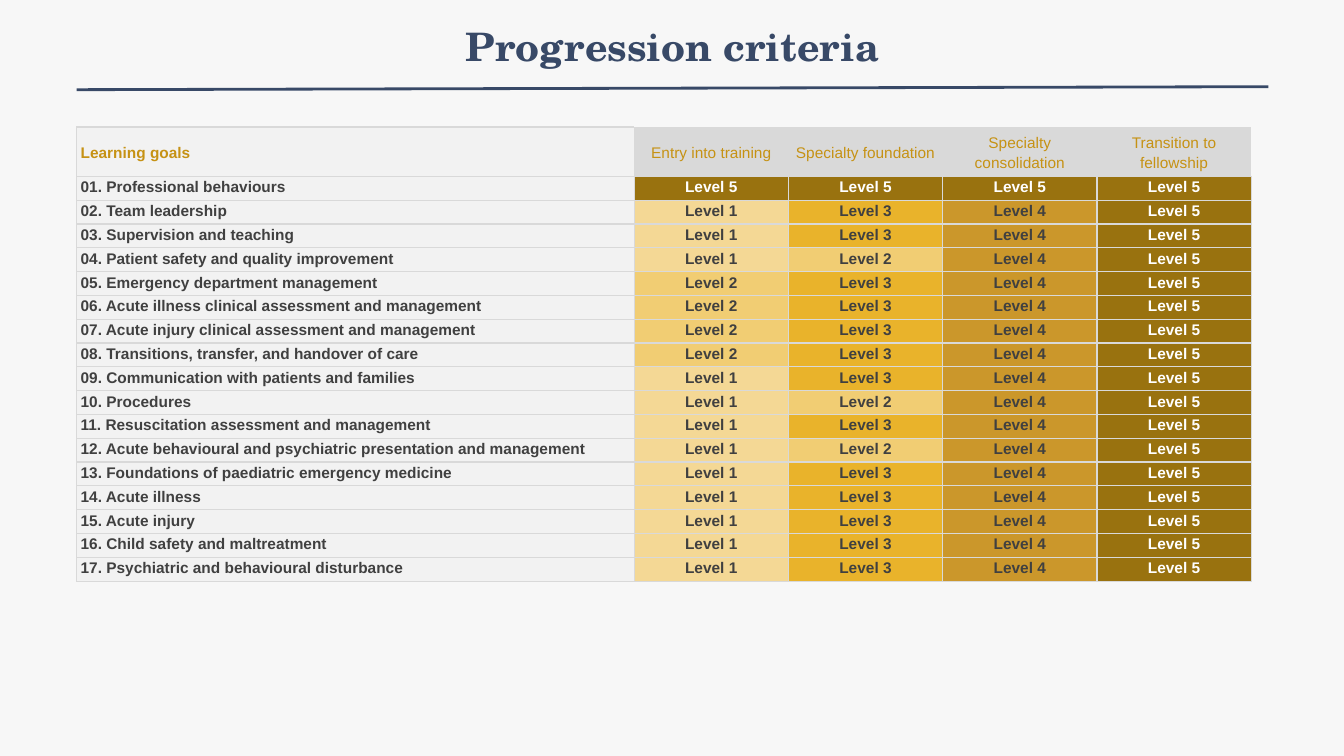
from lxml import etree
from pptx import Presentation
from pptx.dml.color import RGBColor
from pptx.enum.text import MSO_ANCHOR, PP_ALIGN
from pptx.oxml.ns import qn
from pptx.util import Inches, Pt

CENTER, LEFT = PP_ALIGN.CENTER, PP_ALIGN.LEFT
TOP, MIDDLE = MSO_ANCHOR.TOP, MSO_ANCHOR.MIDDLE

PAPER = RGBColor(0xF7, 0xF7, 0xF7)
NAVY = RGBColor(0x38, 0x49, 0x67)
GOLD = RGBColor(0xC6, 0x92, 0x14)
PALE = RGBColor(0xF2, 0xF2, 0xF2)
GREY = RGBColor(0xD9, 0xD9, 0xD9)
DARK = RGBColor(0x40, 0x40, 0x40)
WHITE = RGBColor(0xFF, 0xFF, 0xFF)
LEVEL_FILLS = {
    1: RGBColor(0xF4, 0xD8, 0x95),
    2: RGBColor(0xF1, 0xCD, 0x73),
    3: RGBColor(0xE9, 0xB3, 0x2B),
    4: RGBColor(0xCB, 0x97, 0x2B),
    5: RGBColor(0x99, 0x72, 0x0F),
}

STAGES = ["Entry into training", "Specialty foundation",
          "Specialty consolidation", "Transition to fellowship"]
GOALS = [
    ("Professional behaviours", (5, 5, 5, 5)),
    ("Team leadership", (1, 3, 4, 5)),
    ("Supervision and teaching", (1, 3, 4, 5)),
    ("Patient safety and quality improvement", (1, 2, 4, 5)),
    ("Emergency department management", (2, 3, 4, 5)),
    ("Acute illness clinical assessment and management", (2, 3, 4, 5)),
    ("Acute injury clinical assessment and management", (2, 3, 4, 5)),
    ("Transitions, transfer, and handover of care", (2, 3, 4, 5)),
    ("Communication with patients and families", (1, 3, 4, 5)),
    ("Procedures", (1, 2, 4, 5)),
    ("Resuscitation assessment and management", (1, 3, 4, 5)),
    ("Acute behavioural and psychiatric presentation and management", (1, 2, 4, 5)),
    ("Foundations of paediatric emergency medicine", (1, 3, 4, 5)),
    ("Acute illness", (1, 3, 4, 5)),
    ("Acute injury", (1, 3, 4, 5)),
    ("Child safety and maltreatment", (1, 3, 4, 5)),
    ("Psychiatric and behavioural disturbance", (1, 3, 4, 5)),
]
LEFT_EDGE, TABLE_TOP = 0.76, 1.26
GOAL_W, STAGE_W = 5.53, 1.53
HEADER_H, TABLE_H = 0.49, 4.51


def set_font(font, **values):
    color = values.pop("color")
    for name, value in values.items():
        setattr(font, name, value)
    font.color.rgb = color


def fill_cell(cell, text, fill, color, bold=True, align=CENTER, anchor=TOP,
              space=2, sides="LRTB"):
    """Write and format one cell; sides names the edges that get a grey line."""
    margins = {"margin_left": Inches(0.05 if align == CENTER else 0.04),
               "margin_right": Inches(0.05), "margin_top": 0, "margin_bottom": 0}
    for name, value in margins.items():
        setattr(cell, name, value)
    cell.vertical_anchor = anchor
    tc_pr = cell._tc.get_or_add_tcPr()
    for side in "LRTB":
        ln = etree.SubElement(tc_pr, qn(f"a:ln{side}"), w=str(Pt(1)))
        if side in sides:
            solid = etree.SubElement(ln, qn("a:solidFill"))
            etree.SubElement(solid, qn("a:srgbClr"), val=str(GREY))
        else:
            etree.SubElement(ln, qn("a:noFill"))
    cell.fill.solid()
    cell.fill.fore_color.rgb = fill
    p = cell.text_frame.paragraphs[0]
    p.alignment, p.line_spacing = align, 1.15
    p.space_after = Pt(space)
    r = p.add_run()
    r.text = text
    set_font(r.font, name="Arial", size=Pt(11), bold=bold, color=color)


prs = Presentation()
prs.slide_width, prs.slide_height = Inches(13.33), Inches(7.5)
s = prs.slides.add_slide(prs.slide_layouts[5])
s.background.fill.solid()
s.background.fill.fore_color.rgb = PAPER

title = s.shapes.title
title.left, title.top = Inches(2.17), Inches(0.17)
title.width, title.height = Inches(9), Inches(1.25)
tf = title.text_frame
tf.vertical_anchor = TOP
p = tf.paragraphs[0]
p.alignment = CENTER
r = p.add_run()
r.text = "Progression criteria"
set_font(r.font, name="TeX Gyre Schola", size=Pt(28), bold=True, color=NAVY)

rule = s.shapes.add_connector(1, Inches(LEFT_EDGE), Inches(0.89),
                              Inches(12.58), Inches(0.86))
rule.line.color.rgb, rule.line.width = NAVY, Pt(2)
etree.SubElement(rule._element.spPr, qn("a:effectLst"))

table = s.shapes.add_table(
    len(GOALS) + 1, len(STAGES) + 1, Inches(LEFT_EDGE), Inches(TABLE_TOP),
    Inches(GOAL_W + STAGE_W * len(STAGES)), Inches(TABLE_H)).table
for i, column in enumerate(table.columns):
    column.width = Inches(STAGE_W if i else GOAL_W)
for i, row in enumerate(table.rows):
    row.height = Inches((TABLE_H - HEADER_H) / len(GOALS) if i else HEADER_H)

fill_cell(table.cell(0, 0), "Learning goals", PALE, GOLD, align=LEFT,
          anchor=MIDDLE, space=4)
for j, stage in enumerate(STAGES, 1):
    fill_cell(table.cell(0, j), stage, GREY, GOLD, bold=False,
              anchor=MIDDLE, space=4, sides="")
for i, (goal, levels) in enumerate(GOALS, 1):
    fill_cell(table.cell(i, 0), f"{i:02}. {goal}", PALE, DARK, align=LEFT)
    for j, level in enumerate(levels, 1):
        fill_cell(table.cell(i, j), f"Level {level}", LEVEL_FILLS[level],
                  WHITE if level == 5 else DARK)

prs.save("out.pptx")
